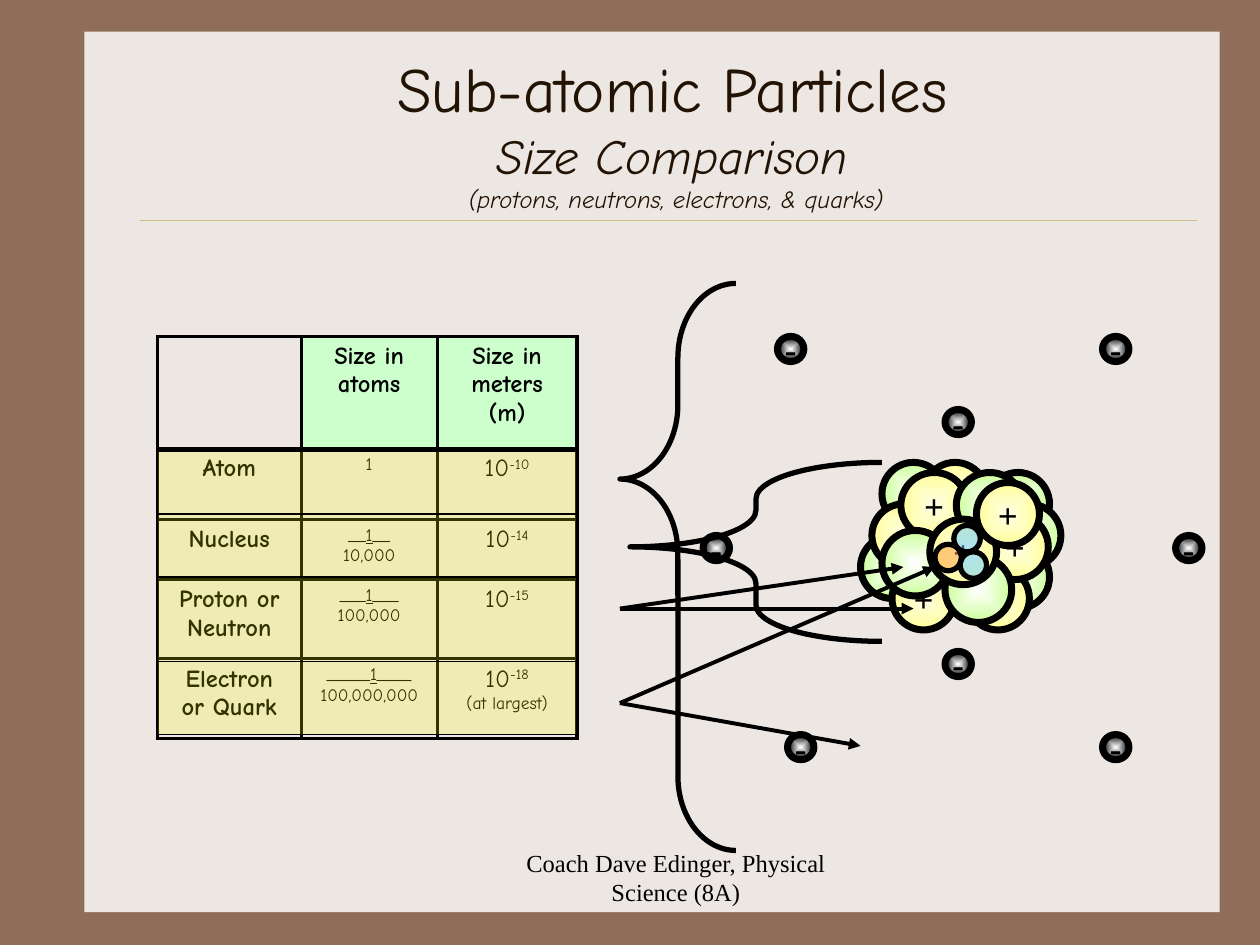
"""Build the sub-atomic particle size comparison slide."""
from lxml import etree
from pptx import Presentation
from pptx import util as u
from pptx.dml.color import RGBColor
from pptx.enum import shapes, text
from pptx.oxml import ns, parse_xml

I = u.Inches
C = {"frame": "906D58", "paper": "EDE7E3", "rule": "CBBD83", "title": "221304",
     "black": "000000", "white": "FFFFFF", "header": "CCFFCC", "neutron": "CCFF99",
     "proton": "FFFF99", "cream": "FEFDE3", "band": "FFFF00",
     "orange": "FF9933", "blue": "66CCFF"}
RGB = {k: RGBColor.from_string(v) for k, v in C.items()}
HAND, SERIF = "Comic Neue", "Times New Roman"
MS = shapes.MSO_SHAPE

prs = Presentation()
prs.slide_width, prs.slide_height = I(10), I(7.5)
slide = prs.slides.add_slide(prs.slide_layouts[6])
slide.background.fill.solid()
slide.background.fill.fore_color.rgb = RGB["frame"]


def add_shape(kind, x, y, w, h, fill=None, width=0, alpha=None):
    s = slide.shapes.add_shape(kind, I(x), I(y), I(w), I(h))
    s.shadow.inherit = False
    if fill:
        s.fill.solid()
        s.fill.fore_color.rgb = RGB[fill]
    else:
        s.fill.background()
    if alpha:
        clr = s._element.spPr.find(".//" + ns.qn("a:srgbClr"))
        etree.SubElement(clr, ns.qn("a:alpha"), val=str(alpha * 1000))
    if width:
        s.line.color.rgb = RGB["black"]
        s.line.width = u.Pt(width)
    else:
        s.line.fill.background()
    return s


def add_run(p, words, size, font=HAND, color="black", **style):
    p.alignment = text.PP_ALIGN.CENTER
    r = p.add_run()
    r.text = words
    r.font.size, r.font.name = u.Pt(size), font
    r.font.color.rgb = RGB[color]
    for name, value in style.items():
        setattr(r.font, name, value)
    return r


add_shape(MS.RECTANGLE, 0.67, 0.25, 9.01, 6.99, "paper")

rule = slide.shapes.add_connector(shapes.MSO_CONNECTOR.STRAIGHT, I(1.11), I(1.75), I(9.5), I(1.75))
rule.line.color.rgb = RGB["rule"]
rule.line.width = u.Pt(0.25)
etree.SubElement(rule._element.spPr, ns.qn("a:effectLst"))

tf = slide.shapes.add_textbox(I(1.17), I(0.42), I(8.33), I(1.25)).text_frame
tf.word_wrap = True
tf.vertical_anchor = text.MSO_ANCHOR.MIDDLE
p = tf.paragraphs[0]
add_run(p, "Sub-atomic Particles", 36, color="title")
p.add_line_break()
add_run(p, "Size Comparison", 28, color="title", italic=True)
p.add_line_break()
add_run(p, " (protons, neutrons, electrons, & quarks)", 14, color="title", italic=True)

rows = [("Atom", "", "", "1", "-10"),
        ("Nucleus", "__", "__", "10,000", "-14"),
        ("Proton or Neutron", "___", "___", "100,000", "-15"),
        ("Electron or Quark", "_____", "____", "100,000,000", "-18")]
table_shape = slide.shapes.add_table(5, 3, I(1.25), I(2.67), I(3.33), I(3.19))
table = table_shape.table
for col, w in zip(table.columns, (1.14, 1.08, 1.11)):
    col.width = I(w)
for row, h in zip(table.rows, (0.89, 0.56, 0.48, 0.63, 0.63)):
    row.height = I(h)
for cell in table.iter_cells():
    tcPr = cell._tc.get_or_add_tcPr()
    for side in ("lnL", "lnR", "lnT", "lnB"):
        ln = etree.SubElement(tcPr, ns.qn("a:" + side), w=str(u.Pt(2)))
        fill = etree.SubElement(ln, ns.qn("a:solidFill"))
        etree.SubElement(fill, ns.qn("a:srgbClr"), val=C["black"])
    cell.fill.background()
for j, label in enumerate(("Size in atoms", "Size in meters (m)"), 1):
    cell = table.cell(0, j)
    cell.fill.solid()
    cell.fill.fore_color.rgb = RGB["header"]
    add_run(cell.text_frame.paragraphs[0], label, 14, bold=True)
for i, (name, before, after, divisor, power) in enumerate(rows, 1):
    frames = [table.cell(i, j).text_frame for j in range(3)]
    add_run(frames[0].paragraphs[0], name, 14, bold=True)
    p = frames[1].paragraphs[0]
    if before:
        add_run(p, before, 10, bold=False)
        add_run(p, "1", 10, bold=False, underline=True)
        add_run(p, after, 10, bold=False)
        p = frames[1].add_paragraph()
    add_run(p, divisor, 10, bold=False)
    p = frames[2].paragraphs[0]
    add_run(p, "10", 14, bold=False)
    r = add_run(p, power, 14, bold=False)
    r.font._element.set("baseline", "30000")
add_run(frames[2].add_paragraph(), "(at largest)", 10, bold=False)

kinds = {"n": ("white", "neutron", ""), "p": ("cream", "proton", "+"), "e": ("white", "black", "-")}
back, front, tiny = (0.5, 0.5), (0.53, 0.52), (0.21, 0.2)
particles = [
    ("n", back, [(7.83, 3.75), (6.83, 4.25), (7.92, 4), (7.83, 4.33), (7, 3.67)]),
    ("p", back, [(7.67, 4.5), (7.33, 3.67), (6.92, 4), (7.08, 4.5)]),
    ("p", front, [(7.15, 3.75)]),
    ("n", front, [(7.59, 3.75)]),
    ("p", front, [(7.79, 4.08)]),
    ("n", front, [(7, 4.21), (7.5, 4.42)]),
    ("p", front, [(7.38, 4.12)]),
    ("e", tiny, [(7.5, 3.25), (7.5, 5.17), (8.75, 2.67), (9.33, 4.25),
                 (8.75, 5.83), (6.25, 5.83), (6.17, 2.67), (5.58, 4.25)]),
    ("p", back, [(7.75, 3.83)]),
]
for kind, size, spots in particles:
    inner, outer, sign = kinds[kind]
    for x, y in spots:
        s = add_shape(MS.OVAL, x, y, *size, outer, 4)
        s.fill.gradient()
        for stop, name in zip(s.fill.gradient_stops, (inner, outer)):
            stop.color.rgb = RGB[name]
        grad = s._element.spPr.find(ns.qn("a:gradFill"))
        grad.replace(grad.find(ns.qn("a:lin")), parse_xml(
            f'<a:path {ns.nsdecls("a")} path="shape">'
            '<a:fillToRect l="50000" t="50000" r="50000" b="50000"/></a:path>'))
        if sign:
            tf = s.text_frame
            tf.word_wrap = False
            tf.vertical_anchor = text.MSO_ANCHOR.MIDDLE
            add_run(tf.paragraphs[0], sign, 20, SERIF, bold=True)

braces = [(4.92, 2.25, 0.92, 4.5, 0.64, 0.345), (5, 3.67, 2, 1.42, 0.204, 0.472)]
for x, y, w, h, curl, tip in braces:
    s = add_shape(MS.LEFT_BRACE, x, y, w, h, width=3)
    s.adjustments[0], s.adjustments[1] = curl, tip

for x, y, color in ((7.42, 4.32, "orange"), (7.62, 4.38, "blue"), (7.57, 4.17, "blue")):
    add_shape(MS.OVAL, x, y, 0.21, 0.21, color, 3, 50)

for y, h in ((3.58, 0.5), (4.08, 0.5), (4.58, 0.67), (5.25, 0.58)):
    add_shape(MS.RECTANGLE, 1.25, y, 3.33, h, "band", 0.75, 20)

for y, targets in ((4.83, [(7.17, 4.5), (7.25, 4.83)]), (5.58, [(7.42, 4.5), (6.83, 5.92)])):
    for tx, ty in targets:
        s = slide.shapes.add_connector(shapes.MSO_CONNECTOR.STRAIGHT, I(4.92), I(y), I(tx), I(ty))
        s.line.color.rgb = RGB["black"]
        s.line.width = u.Pt(2.25)
        etree.SubElement(s.line._get_or_add_ln(), ns.qn("a:tailEnd"), type="triangle")
        etree.SubElement(s._element.spPr, ns.qn("a:effectLst"))

tf = slide.shapes.add_textbox(I(3.78), I(6.68), I(3.17), I(0.5)).text_frame
tf.word_wrap = True
add_run(tf.paragraphs[0], "Coach Dave Edinger, Physical Science (8A)", 14, SERIF)

prs.save("out.pptx")
